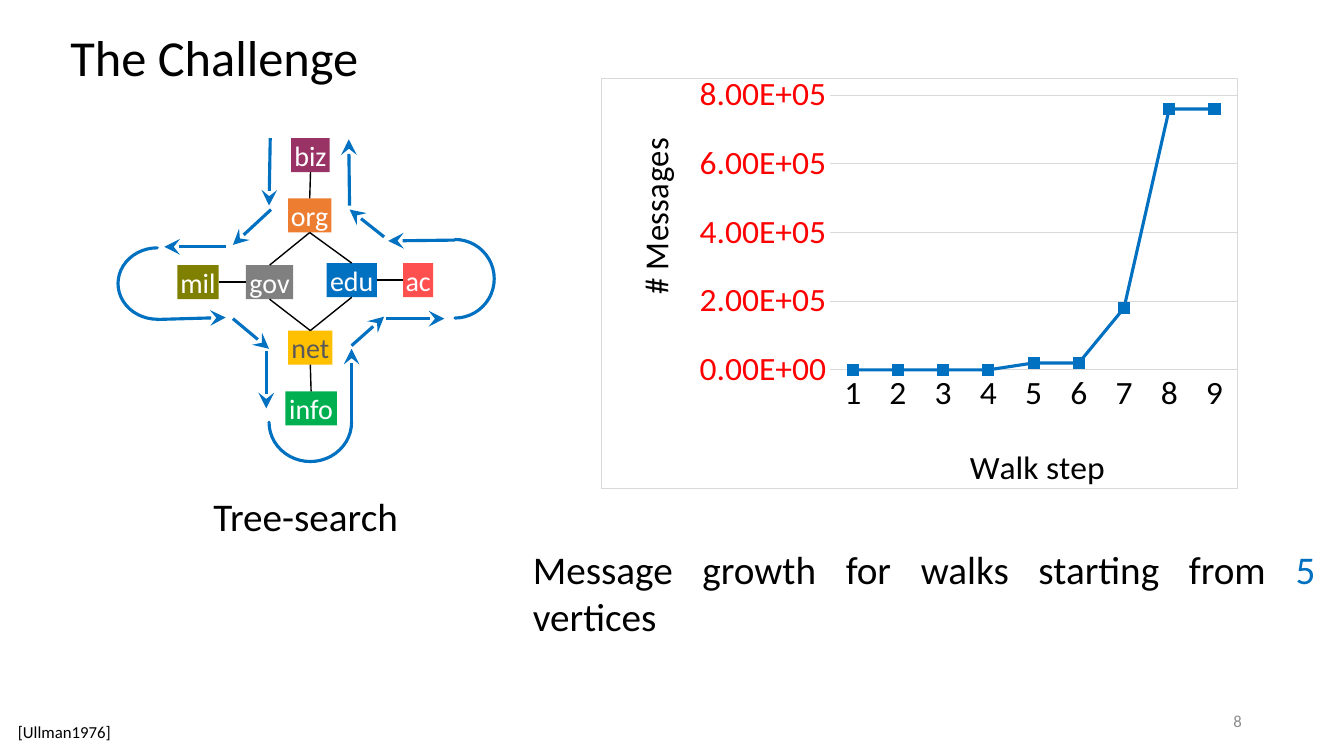
import pptx
import pptx.chart.data
import pptx.dml.color
import pptx.enum.chart
import pptx.enum.dml
import pptx.enum.shapes
import pptx.enum.text
import pptx.oxml
import pptx.oxml.ns
import pptx.util
from dataclasses import dataclass

Cm = pptx.util.Cm
Pt = pptx.util.Pt
qn = pptx.oxml.ns.qn
Align = pptx.enum.text.PP_ALIGN
Anchor = pptx.enum.text.MSO_ANCHOR
Shape = pptx.enum.shapes.MSO_SHAPE


@dataclass(frozen=True)
class Theme:
    """Colours, font and type sizes of the slide."""
    font: str = "Calibri"
    black: str = "000000"
    white: str = "FFFFFF"
    blue: str = "0070C0"
    red: str = "FF0000"
    grid: str = "D9D9D9"
    muted: str = "8C8C8C"
    dark: str = "595959"
    title: int = 36
    caption: int = 28
    axis: int = 24
    node: int = 20
    small: int = 12
    walk_width: float = 2.25
    edge_width: float = 1
    hairline: float = 0.75


THEME = Theme()

NODES = {
    "org": (4.76, 1.52, 1.09, "ED7D31"),
    "gov": (3.7, 3.2, 1.19, "808080"),
    "edu": (5.73, 3.15, 1.27, THEME.blue),
    "net": (4.76, 4.85, 1.12, "FFC000"),
    "biz": (4.84, 0, 0.97, "993366"),
    "info": (4.69, 6.38, 1.3, "00B050"),
    "mil": (1.97, 3.2, 1.04, "808000"),
    "ac": (7.66, 3.15, 0.76, "FF5050"),
}
NODE_HEIGHT = 0.86
TOP, LEFT, BOTTOM, RIGHT = range(4)
EDGES = [
    ("org", BOTTOM, "gov", TOP), ("edu", TOP, "org", BOTTOM),
    ("net", TOP, "gov", BOTTOM), ("edu", BOTTOM, "net", TOP),
    ("org", TOP, "biz", BOTTOM), ("info", TOP, "net", BOTTOM),
    ("gov", LEFT, "mil", RIGHT), ("edu", RIGHT, "ac", LEFT),
]
WALK_ARROWS = [
    (4.31, 0, 4.28, 1.7), (4.33, 1.8, 3.37, 2.69),
    (3.19, 2.74, 1.64, 2.74), (1.46, 4.57, 3.19, 4.52),
    (3.37, 4.55, 4.28, 5.31), (4.21, 5.36, 4.21, 6.81),
    (6.36, 7.16, 6.36, 5.31), (6.36, 5.23, 7.18, 4.5),
    (7.23, 4.55, 8.7, 4.55), (8.96, 2.57, 7.28, 2.59),
    (7.18, 2.49, 6.31, 1.8), (6.31, 1.7, 6.29, 0.03),
]
WALK_TURNS = [(0.07, 3.17, 1.8, 270), (4.28, 7.16, 2.08, 180), (8.47, 3.05, 1.98, 90)]
TURN_DEPTH = 0.99
MESSAGES = [0, 0, 0, 0, 20000, 20000, 180000, 760000, 760000]


def rgb(colour):
    """Return the colour object for a hex value."""
    return pptx.dml.color.RGBColor.from_string(colour)


def style_font(font, size, colour=THEME.black):
    """Apply the theme font with a size and colour."""
    font.name, font.size, font.bold = THEME.font, Pt(size), False
    font.color.rgb = rgb(colour)


def style_line(line, colour, width):
    """Give a line its colour and width."""
    line.color.rgb = rgb(colour)
    line.width = Pt(width)


def add_text(slide, box, pieces, size, align=Align.LEFT, wrap=True, anchor=Anchor.TOP):
    """Add a text box of one paragraph made of coloured pieces."""
    frame = slide.shapes.add_textbox(*map(Cm, box)).text_frame
    frame.word_wrap, frame.vertical_anchor = wrap, anchor
    paragraph = frame.paragraphs[0]
    paragraph.alignment = align
    for text, colour in pieces:
        run = paragraph.add_run()
        run.text = text
        style_font(run.font, size, colour)


def add_title(slide, box, text):
    """Place and format the title placeholder."""
    title = slide.shapes.title
    title.left, title.top, title.width, title.height = map(Cm, box)
    title.text_frame.text = text
    title.text_frame.vertical_anchor = Anchor.MIDDLE
    paragraph = title.text_frame.paragraphs[0]
    paragraph.alignment, paragraph.line_spacing = Align.LEFT, 0.9
    style_font(paragraph.runs[0].font, THEME.title)


def add_line(slide, ends, colour, width, arrow=False):
    """Add a straight line, with an arrowhead at its end if asked."""
    line = slide.shapes.add_connector(pptx.enum.shapes.MSO_CONNECTOR.STRAIGHT, *map(Cm, ends))
    style_line(line.line, colour, width)
    properties = line._element.spPr
    if arrow:
        outline = properties.find(qn("a:ln"))
        outline.append(pptx.oxml.parse_xml(
            f'<a:tailEnd {pptx.oxml.ns.nsdecls("a")} type="stealth" w="lg" len="lg"/>'))
    properties.append(pptx.oxml.parse_xml(f'<a:effectLst {pptx.oxml.ns.nsdecls("a")}/>'))
    return line


def add_node(slide, box, name, fill):
    """Add one labelled vertex of the tree."""
    node = slide.shapes.add_shape(Shape.RECTANGLE, *map(Cm, box))
    node.shadow.inherit = False
    node.fill.solid()
    node.fill.fore_color.rgb = rgb(fill)
    node.line.fill.background()
    frame = node.text_frame
    frame.text = name
    frame.word_wrap, frame.vertical_anchor = False, Anchor.MIDDLE
    frame.margin_left = frame.margin_right = Cm(0.03)
    frame.margin_top = frame.margin_bottom = 0
    paragraph = frame.paragraphs[0]
    paragraph.alignment = Align.CENTER
    style_font(paragraph.runs[0].font, THEME.node, THEME.dark if name == "net" else THEME.white)
    return node


def add_tree(slide, left, top):
    """Draw the vertices, their edges and the walk around them."""
    nodes = {name: add_node(slide, (left + x, top + y, width, NODE_HEIGHT), name, fill)
             for name, (x, y, width, fill) in NODES.items()}
    for start, start_side, end, end_side in EDGES:
        edge = add_line(slide, (left, top, left, top), THEME.black, THEME.edge_width)
        edge.begin_connect(nodes[start], start_side)
        edge.end_connect(nodes[end], end_side)
    for x1, y1, x2, y2 in WALK_ARROWS:
        add_line(slide, (left + x1, top + y1, left + x2, top + y2),
                 THEME.blue, THEME.walk_width, arrow=True)
    for x, y, width, rotation in WALK_TURNS:
        turn = slide.shapes.add_shape(Shape.CURVED_DOWN_ARROW, Cm(left + x), Cm(top + y),
                                      Cm(width), Cm(TURN_DEPTH))
        turn.shadow.inherit = False
        turn.rotation = rotation
        for index in range(3):
            turn.adjustments[index] = 0
        turn.fill.background()
        style_line(turn.line, THEME.blue, THEME.walk_width)


def set_layout(parent, index, target="", **fractions):
    """Fix the place of a chart part as fractions of the chart."""
    for layout in parent.findall(qn("c:layout")):
        parent.remove(layout)
    values = "".join(f'<c:{key} val="{value}"/>' for key, value in fractions.items())
    parent.insert(index, pptx.oxml.parse_xml(
        f'<c:layout {pptx.oxml.ns.nsdecls("c")}><c:manualLayout>{target}'
        f'<c:xMode val="edge"/><c:yMode val="edge"/>{values}</c:manualLayout></c:layout>'))


def style_axis(axis, title, colour, x, y, rotation):
    """Format an axis and place its title."""
    axis.major_tick_mark = axis.minor_tick_mark = pptx.enum.chart.XL_TICK_MARK.NONE
    style_font(axis.tick_labels.font, THEME.axis, colour)
    frame = axis.axis_title.text_frame
    frame.text = title
    style_font(frame.paragraphs[0].runs[0].font, THEME.axis)
    element = axis.axis_title._element
    element.find(".//" + qn("a:bodyPr")).set("rot", str(rotation * 60000))
    set_layout(element, 1, x=x, y=y)


def add_message_chart(slide, box):
    """Add the line chart of messages per walk step."""
    data = pptx.chart.data.CategoryChartData()
    data.categories = [str(step) for step in range(1, len(MESSAGES) + 1)]
    data.add_series("Series 1", MESSAGES)
    chart = slide.shapes.add_chart(pptx.enum.chart.XL_CHART_TYPE.LINE_MARKERS,
                                   *map(Cm, box), data).chart
    chart.has_title = chart.has_legend = False
    style_font(chart.font, THEME.axis)
    steps, counts = chart.category_axis, chart.value_axis
    style_axis(steps, "Walk step", THEME.black, 0.57, 0.88, 0)
    style_axis(counts, "# Messages", THEME.red, 0.04, 0.14, -90)
    style_line(steps.format.line, THEME.grid, THEME.hairline)
    counts.format.line.fill.background()
    counts.minimum_scale, counts.maximum_scale, counts.major_unit = 0, 800000, 200000
    counts.tick_labels.number_format = "0.00E+00"
    counts.tick_labels.number_format_is_linked = False
    style_line(counts.major_gridlines.format.line, THEME.grid, THEME.hairline)
    chart.plots[0].vary_by_categories = False
    series = chart.plots[0].series[0]
    series.smooth = False
    style_line(series.format.line, THEME.blue, THEME.walk_width)
    series.marker.style = pptx.enum.chart.XL_MARKER_STYLE.SQUARE
    series.marker.size = 8
    series.marker.format.fill.solid()
    series.marker.format.fill.fore_color.rgb = rgb(THEME.blue)
    series.marker.format.line.fill.background()
    body = chart._chartSpace.find(qn("c:chart"))
    set_layout(body.find(qn("c:plotArea")), 0, '<c:layoutTarget val="inner"/>',
               x=0.36, y=0.04, w=0.64, h=0.67)
    body.addnext(pptx.oxml.parse_xml(
        f'<c:spPr {pptx.oxml.ns.nsdecls("c", "a")}><a:noFill/><a:ln w="{Pt(THEME.hairline)}">'
        f'<a:solidFill><a:srgbClr val="{THEME.grid}"/></a:solidFill></a:ln></c:spPr>'))


def main():
    """Build the slide and save it."""
    presentation = pptx.Presentation()
    presentation.slide_width, presentation.slide_height = Cm(33.87), Cm(19.05)
    slide = presentation.slides.add_slide(presentation.slide_layouts[5])
    add_title(slide, (1.52, 0.76, 29.2, 1.5), "The Challenge")
    add_message_chart(slide, (15.14, 1.9, 16.05, 10.67))
    add_tree(slide, 2.5, 3.48)
    add_text(slide, (5.13, 12.29, 5.38, 1.45), [("Tree-search", THEME.black)],
             THEME.caption, Align.JUSTIFY)
    add_text(slide, (13.18, 13.61, 20.22, 1.45),
             [("Message growth for walks starting from ", THEME.black), ("5", THEME.blue),
              (" vertices", THEME.black)], THEME.caption, Align.JUSTIFY)
    add_text(slide, (23.93, 17.65, 7.62, 1.02), [("8", THEME.muted)], THEME.small,
             Align.RIGHT, anchor=Anchor.MIDDLE)
    add_text(slide, (0.2, 18.06, 2.9, 0.76), [("[Ullman1976]", THEME.black)],
             THEME.small, wrap=False)
    presentation.save("out.pptx")


if __name__ == "__main__":
    main()
